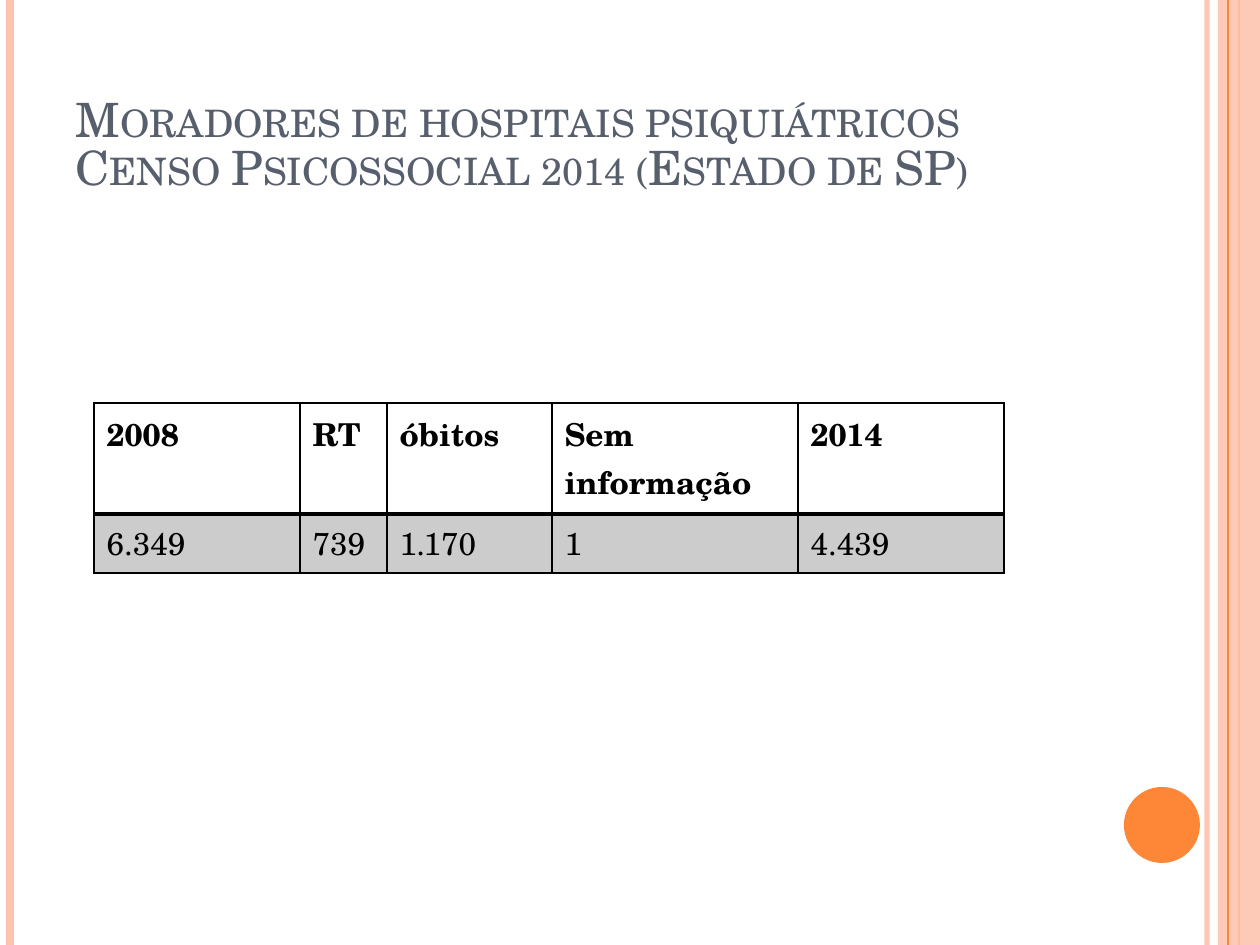
from dataclasses import dataclass

from lxml import etree
from pptx import Presentation
from pptx.dml.color import RGBColor
from pptx.enum.shapes import MSO_CONNECTOR, MSO_SHAPE
from pptx.enum.text import MSO_ANCHOR, MSO_AUTO_SIZE, PP_ALIGN
from pptx.oxml import parse_xml
from pptx.oxml.ns import nsdecls, qn
from pptx.util import Pt

PX = 914400 / 126


@dataclass(frozen=True)
class Theme:
    font: str = "TeX Gyre Schola"
    orange: RGBColor = RGBColor(0xFE, 0x86, 0x37)
    peach: RGBColor = RGBColor(0xFE, 0xC3, 0xAE)
    slate: RGBColor = RGBColor(0x57, 0x5F, 0x6D)
    black: RGBColor = RGBColor(0, 0, 0)
    title_size: Pt = Pt(27)
    table_size: Pt = Pt(18)


theme = Theme()


def px(*lengths):
    """Turn pixel lengths into a list of EMU."""
    return [round(length * PX) for length in lengths]


def set_opacity(element, percent):
    """Make the solid colour inside an element partly transparent."""
    color = next(element.iter(qn("a:srgbClr")))
    etree.SubElement(color, qn("a:alpha")).set("val", str(percent * 1000))


prs = Presentation()
prs.slide_width, prs.slide_height = px(1260, 945)
slide = prs.slides.add_slide(prs.slide_layouts[5])
shapes = slide.shapes

# Vertical stripes: x, colour, width in points, opacity; the band covers some
stripes = [
    (1207, theme.peach, 3, 93),
    (10, theme.peach, 4.5, 100),
    (1239, theme.orange, 1.5, 100),
    (1228, theme.orange, 0.75, 100),
]
band_after = 2
for index, (x, color, width, opacity) in enumerate(stripes):
    stripe = shapes.add_connector(MSO_CONNECTOR.STRAIGHT, *px(x, 0, x, 945))
    stripe.line.color.rgb = color
    stripe.line.width = Pt(width)
    if opacity < 100:
        set_opacity(stripe.line._get_or_add_ln(), opacity)
    etree.SubElement(stripe._element.spPr, qn("a:effectLst"))
    if index == band_after:
        band = shapes.add_shape(MSO_SHAPE.RECTANGLE, *px(1218, 0, 42, 945))

dot = shapes.add_shape(MSO_SHAPE.OVAL, *px(1124, 787, 76, 76))
for ornament, color in ((band, theme.peach), (dot, theme.orange)):
    ornament.shadow.inherit = False
    ornament.fill.solid()
    ornament.fill.fore_color.rgb = color
    ornament.line.fill.background()
set_opacity(band._element.spPr, 87)

# Title
title = shapes.title
title.left, title.top, title.width, title.height = px(63, 38, 1029, 157)
heading = title.text_frame
heading.text = "Moradores de hospitais psiquiátricos\vCenso Psicossocial 2014 (Estado de SP)"
heading.word_wrap = True
heading.auto_size = MSO_AUTO_SIZE.NONE
heading.vertical_anchor = MSO_ANCHOR.BOTTOM
heading.margin_bottom = 0
heading_line = heading.paragraphs[0]
heading_line.alignment = PP_ALIGN.LEFT
heading_line.line_spacing = 0.84
heading_line.font.name = theme.font
heading_line.font.size = theme.title_size
heading_line.font.color.rgb = theme.slate
heading_line._p.pPr.find(qn("a:defRPr")).set("cap", "small")

# Census table
census = [
    ["2008", "RT", "óbitos", "Sem informação", "2014"],
    ["6.349", "739", "1.170", "1", "4.439"],
]
column_widths = [206, 87, 165, 246, 206]
row_heights = [111, 58]
table = shapes.add_table(
    len(census), len(column_widths),
    *px(94, 403, sum(column_widths), sum(row_heights)),
).table
table.first_row = False
table.horz_banding = False
for column, width in zip(table.columns, px(*column_widths)):
    column.width = width
for row, height in zip(table.rows, px(*row_heights)):
    row.height = height

for r, values in enumerate(census):
    is_header = r == 0
    # Left, right, top and bottom border widths in points
    borders = {"lnL": 1, "lnR": 1, "lnT": 1 if is_header else 2, "lnB": 2 if is_header else 1}
    for c, value in enumerate(values):
        cell = table.cell(r, c)
        cell.text = value
        entry = cell.text_frame.paragraphs[0]
        entry.font.name = theme.font
        entry.font.size = theme.table_size
        entry.font.bold = is_header
        entry.font.color.rgb = theme.black
        properties = cell._tc.get_or_add_tcPr()
        if is_header:
            cell.fill.background()
        else:
            cell.fill.solid()
            cell.fill.fore_color.rgb = theme.black
            set_opacity(properties, 20)
        for position, (side, width) in enumerate(borders.items()):
            properties.insert(position, parse_xml(
                f'<a:{side} {nsdecls("a")} w="{Pt(width)}"><a:solidFill>'
                f'<a:srgbClr val="{theme.black}"/></a:solidFill></a:{side}>'
            ))

prs.save("out.pptx")
